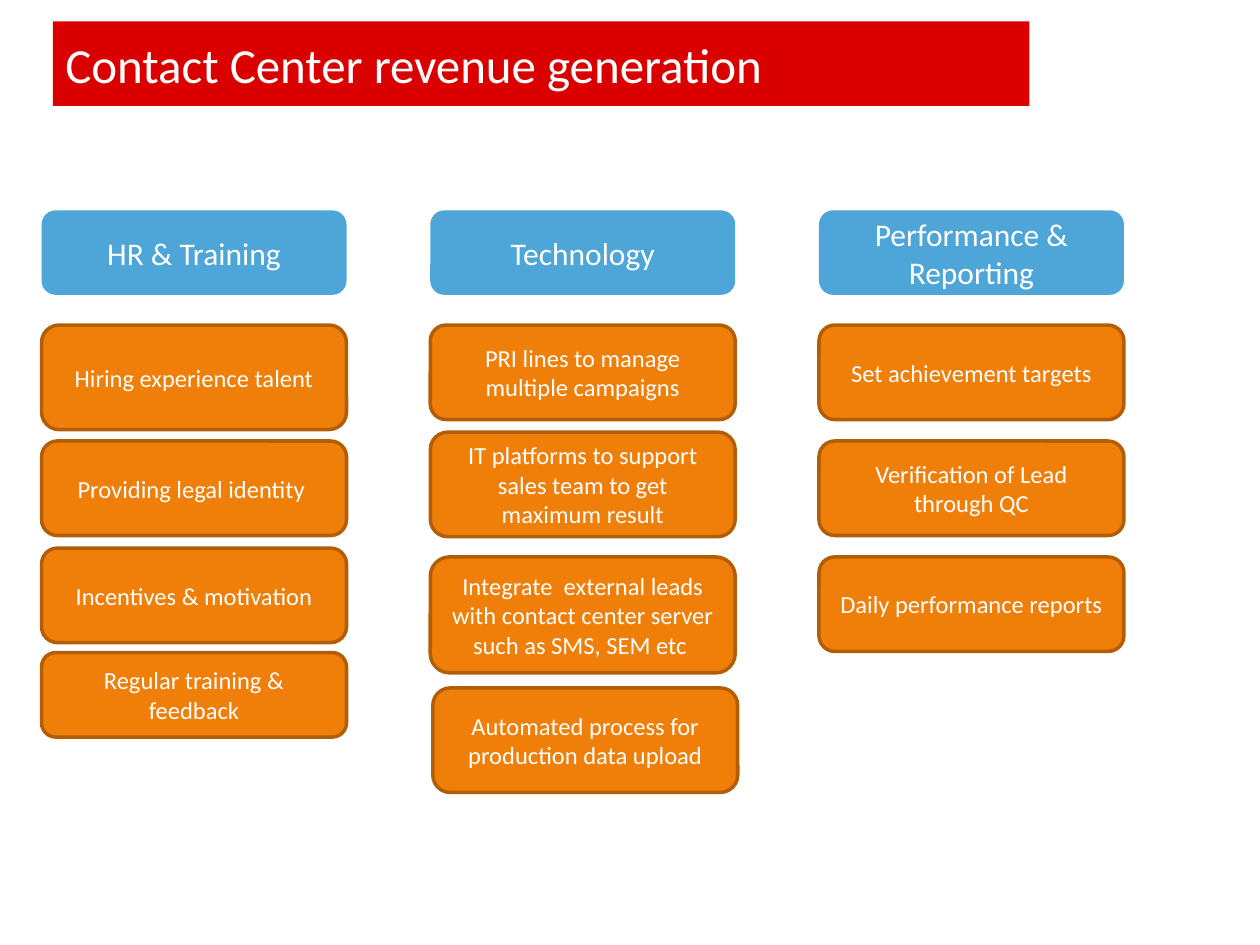
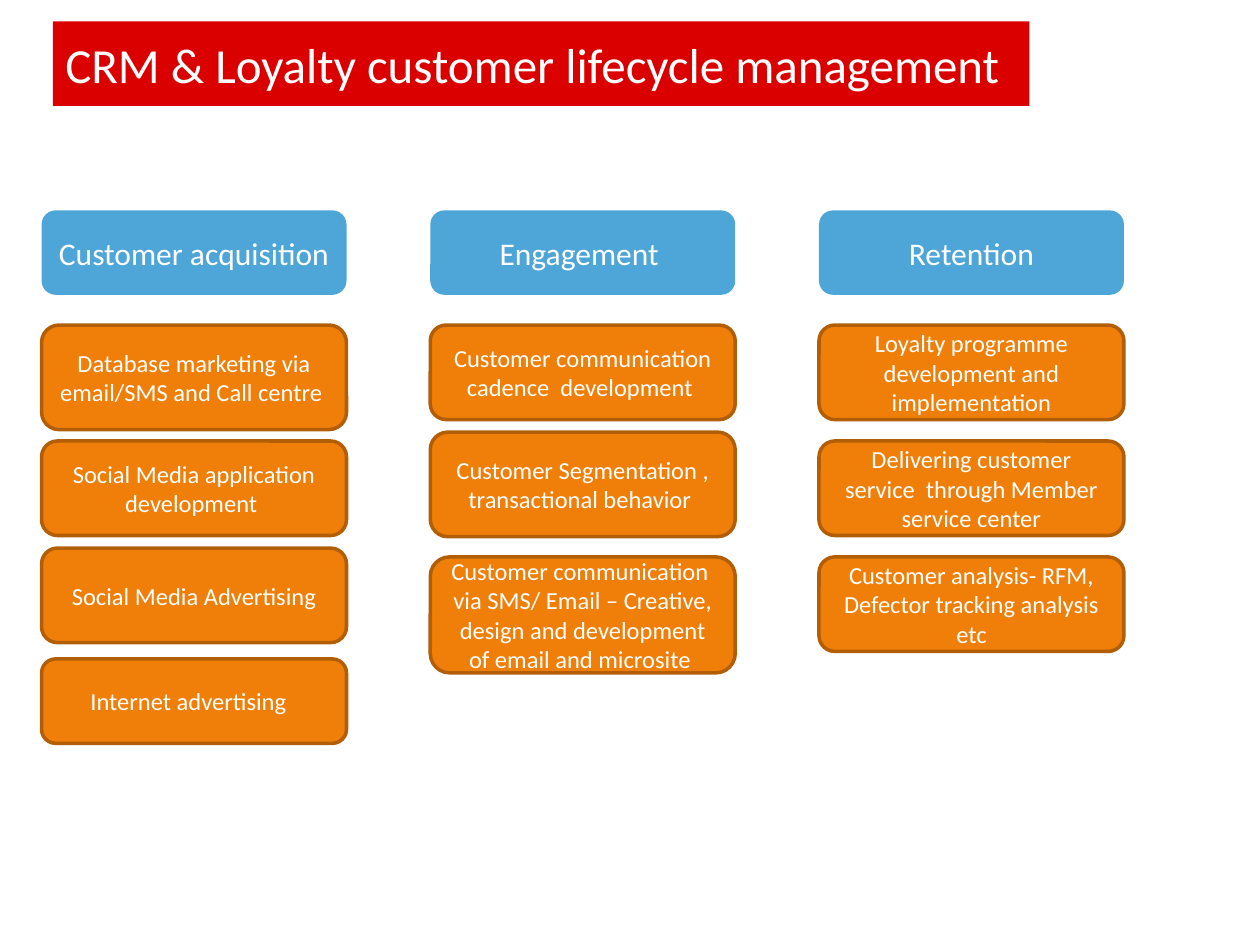
from pptx import Presentation
from pptx.dml.color import RGBColor
from pptx.enum.shapes import MSO_SHAPE
from pptx.enum.text import MSO_ANCHOR, PP_ALIGN
from pptx.util import Inches, Pt

COLORS = {
    "banner": "DA0000",
    "heading": "4EA5D8",
    "card": "F07F09",
    "card_edge": "B25E07",
    "text": "FFFFFF",
}
FONT = "Calibri"
COLUMN_LEFT = 0.33
COLUMN_STEP = 3.085
COLUMN_WIDTH = 2.42

CARD_SLOTS = [
    [(2.58, 0.83), (3.5, 0.75), (4.35, 0.75), (5.18, 0.67)],
    [(2.58, 0.75), (3.43, 0.83), (4.42, 0.92), (5.46, 0.83)],
    [(2.58, 0.75), (3.5, 0.75), (4.42, 0.75)],
]

REVENUE = {
    "title": "Contact Center revenue generation",
    "columns": [
        ("HR & Training", [
            "Hiring experience talent",
            "Providing legal identity ",
            "Incentives & motivation",
            "Regular training & feedback",
        ]),
        ("Technology", [
            "PRI lines to manage multiple campaigns",
            "IT platforms to support sales team to get maximum result",
            "Integrate  external leads with contact center server\vsuch as SMS, SEM etc ",
            "Automated process for production data upload",
        ]),
        ("Performance & Reporting", [
            "Set achievement targets",
            "Verification of Lead through QC",
            "Daily performance reports",
        ]),
    ],
    "shifts": {(1, 3): (0.02, 0)},
}

LOYALTY = {
    "title": "CRM & Loyalty customer lifecycle management",
    "columns": [
        ("Customer acquisition", [
            "Database marketing via email/SMS and Call centre  ",
            "Social Media application development ",
            "Social Media Advertising",
            "Internet advertising  ",
        ]),
        ("Engagement ", [
            "Customer communication cadence  development ",
            "Customer Segmentation , transactional behavior ",
            "Customer communication  via SMS/ Email – Creative, "
            "design and development of email and microsite ",
        ]),
        ("Retention", [
            "Loyalty programme development and implementation",
            "Delivering customer service  through Member service center",
            "Customer analysis- RFM, Defector tracking analysis etc",
        ]),
    ],
    "shifts": {(0, 3): (0, 0.05)},
}


def color(name):
    return RGBColor.from_string(COLORS[name])


def add_block(slide, preset, bounds, fill, text, size, align, edge=None):
    block = slide.shapes.add_shape(preset, *map(Inches, bounds))
    block.shadow.inherit = False
    block.fill.solid()
    block.fill.fore_color.rgb = color(fill)
    if edge:
        block.line.color.rgb = color(edge)
        block.line.width = Pt(2)
    else:
        block.line.fill.background()
    frame = block.text_frame
    frame.word_wrap = True
    frame.vertical_anchor = MSO_ANCHOR.MIDDLE
    frame.text = text
    paragraph = frame.paragraphs[0]
    paragraph.alignment = align
    paragraph.font.name = FONT
    paragraph.font.size = Pt(size)
    paragraph.font.color.rgb = color("text")


def add_banner(slide, title):
    add_block(slide, MSO_SHAPE.RECTANGLE, (0.42, 0.17, 7.75, 0.67),
              "banner", title, 28, PP_ALIGN.LEFT)


def add_heading(slide, left, text):
    add_block(slide, MSO_SHAPE.ROUNDED_RECTANGLE, (left, 1.67, COLUMN_WIDTH, 0.67),
              "heading", text, 18, PP_ALIGN.CENTER)


def add_card(slide, left, top, height, text):
    add_block(slide, MSO_SHAPE.ROUNDED_RECTANGLE, (left, top, COLUMN_WIDTH, height),
              "card", text, 14, PP_ALIGN.CENTER, "card_edge")


def add_column_slide(deck, topic):
    slide = deck.slides.add_slide(deck.slide_layouts[6])
    add_banner(slide, topic["title"])
    for column, (heading, cards) in enumerate(topic["columns"]):
        left = COLUMN_LEFT + column * COLUMN_STEP
        add_heading(slide, left, heading)
        for row, (text, (top, height)) in enumerate(zip(cards, CARD_SLOTS[column])):
            right, down = topic["shifts"].get((column, row), (0, 0))
            add_card(slide, left + right, top + down, height, text)


def main():
    deck = Presentation()
    deck.slide_width = Inches(10)
    deck.slide_height = Inches(7.5)
    for topic in (REVENUE, LOYALTY):
        add_column_slide(deck, topic)
    deck.save("out.pptx")


if __name__ == "__main__":
    main()
